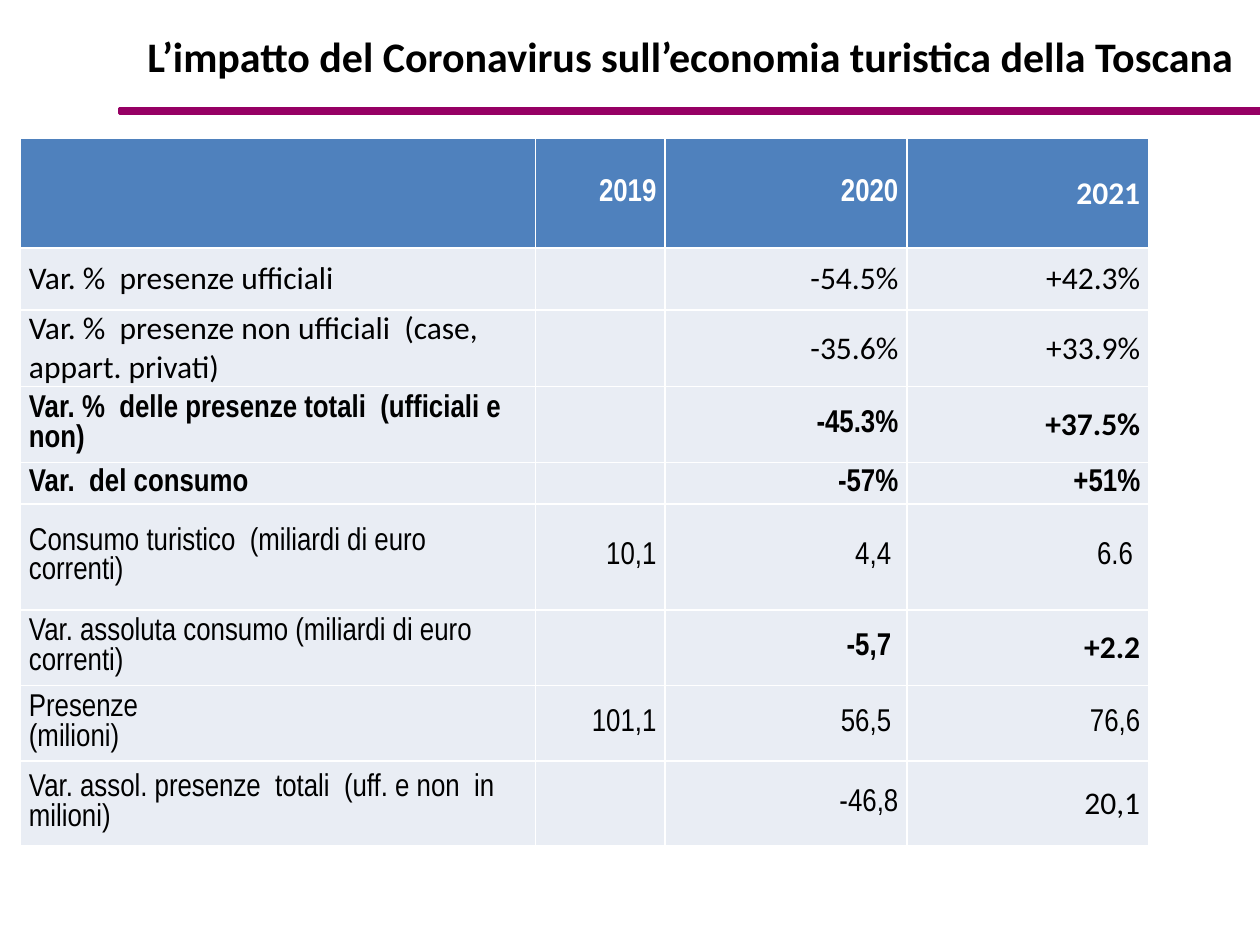
import pptx
import pptx.util
import pptx.dml.color
import pptx.enum.text
import pptx.enum.shapes

Inches, Pt = pptx.util.Inches, pptx.util.Pt
ALIGN = pptx.enum.text.PP_ALIGN
MIDDLE = pptx.enum.text.MSO_ANCHOR.MIDDLE

COLORS = {"bar": "960064", "head": "4F81BD", "body": "E9EDF4",
          "light": "FFFFFF", "dark": "000000"}
SANS, THIN = "Calibri", "Arial Narrow"

TITLE = "L’impatto del Coronavirus sull’economia turistica della Toscana"
ROWS = [
    ("", "2019", "2020", "2021"),
    ("Var. %  presenze ufficiali", "", "-54.5%", "+42.3%"),
    ("Var. %  presenze non ufficiali  (case, appart. privati)", "", "-35.6%", "+33.9%"),
    ("Var. %  delle presenze totali  (ufficiali e non)", "", "-45.3%", "+37.5%"),
    ("Var.  del consumo", "", "-57%", "+51%"),
    ("Consumo turistico  (miliardi di euro correnti)", "10,1", " 4,4 ", "6.6 "),
    ("Var. assoluta consumo (miliardi di euro correnti)", "", "-5,7 ", "+2.2"),
    ("Presenze\n(milioni)", "101,1", " 56,5 ", "76,6"),
    ("Var. assol. presenze  totali  (uff. e non  in milioni)", "", "-46,8", "20,1"),
]
WIDTHS = [4.09, 1.03, 1.92, 1.92]
HEIGHTS = [0.87, 0.49, 0.61, 0.56, 0.33, 0.84, 0.56, 0.56, 0.67]
SANS_ROWS = {1, 2}
SANS_CELLS = {(0, 3), (3, 3), (6, 3), (8, 3)}
BOLD_ROWS = {0, 3, 4}
BOLD_CELLS = {(6, 2), (6, 3)}


def color(name):
    return pptx.dml.color.RGBColor.from_string(COLORS[name])


def style(para, face, size, bold, tint, align):
    para.alignment = align
    font = para.font
    font.name, font.size, font.bold = face, Pt(size), bold
    font.color.rgb = color(tint)


def add_title(slide):
    box = slide.shapes.add_textbox(Inches(0.98), Inches(-0.02), Inches(9), Inches(0.92))
    frame = box.text_frame
    frame.word_wrap = True
    frame.vertical_anchor = MIDDLE
    frame.text = TITLE
    style(frame.paragraphs[0], SANS, 24, True, "dark", ALIGN.CENTER)


def add_bar(slide):
    bar = slide.shapes.add_shape(pptx.enum.shapes.MSO_SHAPE.RECTANGLE,
                                 Inches(0.95), Inches(0.86), Inches(9.05), Inches(0.04))
    bar.shadow.inherit = False
    bar.fill.solid()
    bar.fill.fore_color.rgb = color("bar")
    bar.line.color.rgb = color("bar")
    bar.line.width = Pt(2)


def fill_cell(cell, row, col, text):
    head = row == 0
    cell.fill.solid()
    cell.fill.fore_color.rgb = color("head" if head else "body")
    cell.vertical_anchor = MIDDLE
    cell.margin_left = cell.margin_right = Inches(0.07)
    cell.margin_top = cell.margin_bottom = 0
    cell.text = text
    face = SANS if row in SANS_ROWS or (row, col) in SANS_CELLS else THIN
    bold = row in BOLD_ROWS or (row, col) in BOLD_CELLS
    for para in cell.text_frame.paragraphs:
        style(para, face, 18, bold, "light" if head else "dark",
              ALIGN.RIGHT if col else ALIGN.LEFT)


def add_data(slide):
    table = slide.shapes.add_table(len(ROWS), len(WIDTHS), Inches(0.16), Inches(1.1),
                                   Inches(sum(WIDTHS)), Inches(sum(HEIGHTS))).table
    table.horz_banding = False
    for col, width in zip(table.columns, WIDTHS):
        col.width = Inches(width)
    for row, height in zip(table.rows, HEIGHTS):
        row.height = Inches(height)
    for r, texts in enumerate(ROWS):
        for c, text in enumerate(texts):
            fill_cell(table.cell(r, c), r, c, text)


def main():
    deck = pptx.Presentation()
    deck.slide_width, deck.slide_height = Inches(10), Inches(7.5)
    slide = deck.slides.add_slide(deck.slide_layouts[6])
    add_bar(slide)
    add_title(slide)
    add_data(slide)
    deck.save("out.pptx")


if __name__ == "__main__":
    main()
